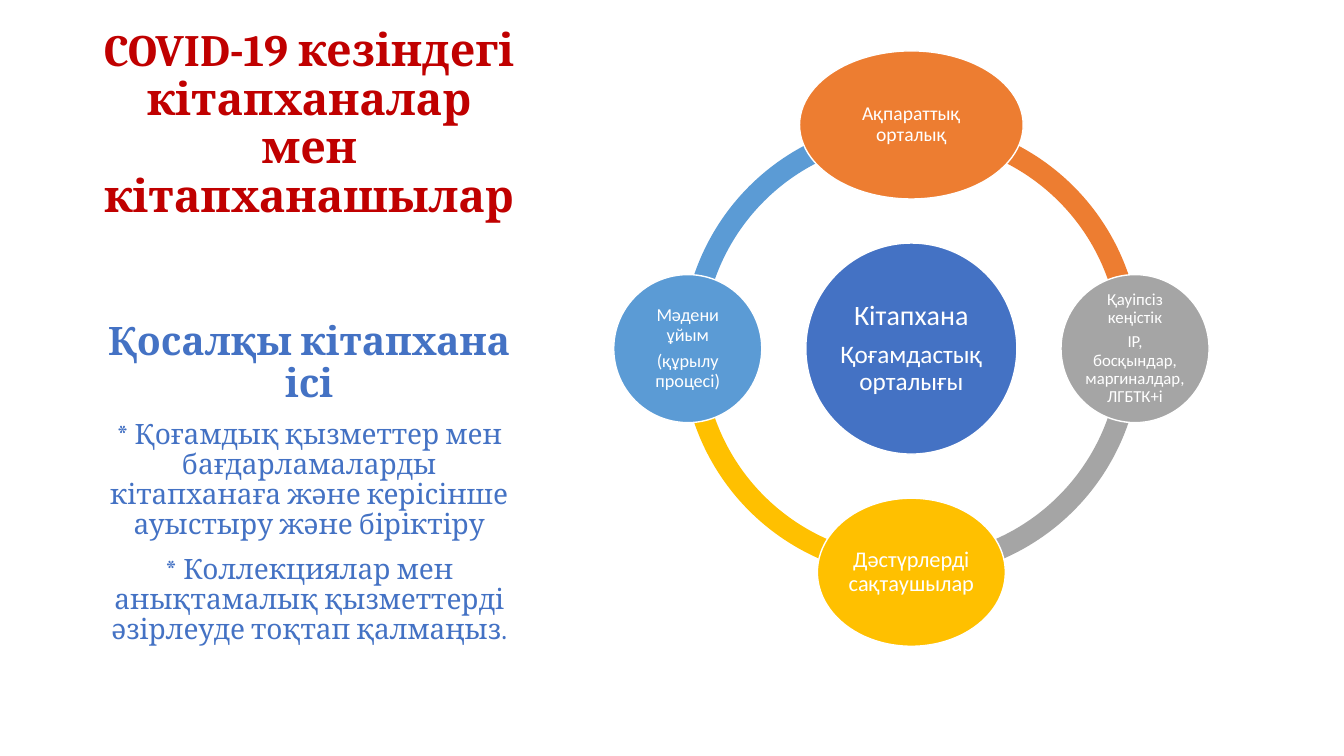
"""Builds a slide on libraries during COVID-19 with a ring diagram of library roles."""
import math

import pptx
import pptx.dml.color
import pptx.enum.shapes
import pptx.enum.text
import pptx.util

PX = 9525
THEME = {
    "heading": "Cambria", "label": "Calibri",
    "red": "C00000", "blue": "4472C4", "white": "FFFFFF",
    "orange": "ED7D31", "grey": "A5A5A5", "yellow": "FFC000", "sky": "5B9BD5",
    "title": 32, "subtitle": 28, "body": 20,
    "hub": 20, "hub_detail": 18, "top": 14, "right": 12, "bottom": 16, "left": 13,
}
SHAPES = pptx.enum.shapes.MSO_SHAPE
ANCHOR = pptx.enum.text.MSO_ANCHOR


def write(frame, lines, font, color, frame_format, before=0, after=0):
    """Fill a text frame with centred lines of (text, size name, bold)."""
    frame_format = {"word_wrap": True, "auto_size": pptx.enum.text.MSO_AUTO_SIZE.NONE} | frame_format
    for name, value in frame_format.items():
        setattr(frame, name, value)
    for index, (text, size, bold) in enumerate(lines):
        para = frame.paragraphs[0] if index == 0 else frame.add_paragraph()
        para_format = {
            "alignment": pptx.enum.text.PP_ALIGN.CENTER,
            "line_spacing": 0.9,
            "space_before": pptx.util.Pt(before if index else 0),
            "space_after": pptx.util.Pt(round(after * THEME[size], 1)),
        }
        for name, value in para_format.items():
            setattr(para, name, value)
        span = para.add_run()
        span.text = text
        span_format = {"name": THEME[font], "size": pptx.util.Pt(THEME[size]), "bold": bold}
        for name, value in span_format.items():
            setattr(span.font, name, value)
        span.font.color.rgb = pptx.dml.color.RGBColor.from_string(THEME[color])


def add_round(page, kind, center_x, center_y, width, height, color, outlined):
    """Add a filled shape around a centre, with a white outline or none."""
    shape = page.shapes.add_shape(
        kind, round((center_x - width / 2) * PX), round((center_y - height / 2) * PX), width * PX, height * PX)
    shape.shadow.inherit = False
    shape.fill.solid()
    shape.fill.fore_color.rgb = pptx.dml.color.RGBColor.from_string(THEME[color])
    if outlined:
        shape.line.color.rgb = pptx.dml.color.RGBColor.from_string(THEME["white"])
        shape.line.width = pptx.util.Pt(1)
    else:
        shape.line.fill.background()
    return shape


deck = pptx.Presentation()
deck.slide_width, deck.slide_height = 1280 * PX, 720 * PX
page = deck.slides.add_slide(deck.slide_layouts.get_by_name("Title Only"))

title = page.shapes.title
title_place = {"left": 88, "top": 48, "width": 413, "height": 168}
for name, value in title_place.items():
    setattr(title, name, value * PX)
write(title.text_frame, [("COVID-19 кезіндегі кітапханалар мен кітапханашылар", "title", True)],
      "heading", "red", {"vertical_anchor": ANCHOR.BOTTOM})

body = page.shapes.add_textbox(88 * PX, 216 * PX, 413 * PX, 400 * PX)
body_lines = [
    ("Қосалқы кітапхана ісі", "subtitle", True),
    ("* Қоғамдық қызметтер мен бағдарламаларды кітапханаға және керісінше ауыстыру және біріктіру", "body", False),
    ("* Коллекциялар мен анықтамалық қызметтерді әзірлеуде тоқтап қалмаңыз.", "body", False),
]
write(body.text_frame, body_lines, "heading", "blue",
      {"vertical_anchor": ANCHOR.TOP, "margin_top": 90 * PX}, before=10)

CENTER_X, CENTER_Y = 868, 332
RING, ORBIT, HUB, NODE = 437, 213, 201, 141
roles = [
    (270, "orange", 213, "top", ["Ақпараттық орталық"]),
    (0, "grey", NODE, "right", ["Қауіпсіз кеңістік", "IP, босқындар, маргиналдар, ЛГБТК+i"]),
    (90, "yellow", 179, "bottom", ["Дәстүрлерді сақтаушылар"]),
    (180, "sky", NODE, "left", ["Мәдени ұйым", "(құрылу процесі)"]),
]
label_format = {"vertical_anchor": ANCHOR.MIDDLE}
for side in ("left", "top", "right", "bottom"):
    label_format[f"margin_{side}"] = 2 * PX

for angle, color, width, size, texts in reversed(roles):
    arc = add_round(page, SHAPES.BLOCK_ARC, CENTER_X, CENTER_Y, RING, RING, color, False)
    for index, value in enumerate((angle * 0.6, (angle + 90) % 360 * 0.6, 0.046)):
        arc.adjustments[index] = value

hub = add_round(page, SHAPES.OVAL, CENTER_X, CENTER_Y, HUB, HUB, "blue", True)
write(hub.text_frame, [("Кітапхана", "hub", False), ("Қоғамдастық орталығы", "hub_detail", False)],
      "label", "white", label_format, after=0.35)

for angle, color, width, size, texts in roles:
    node_x = CENTER_X + ORBIT * math.cos(math.radians(angle))
    node_y = CENTER_Y + ORBIT * math.sin(math.radians(angle))
    node = add_round(page, SHAPES.OVAL, node_x, node_y, width, NODE, color, True)
    write(node.text_frame, [(text, size, False) for text in texts],
          "label", "white", label_format, after=0.35)

deck.save("out.pptx")
